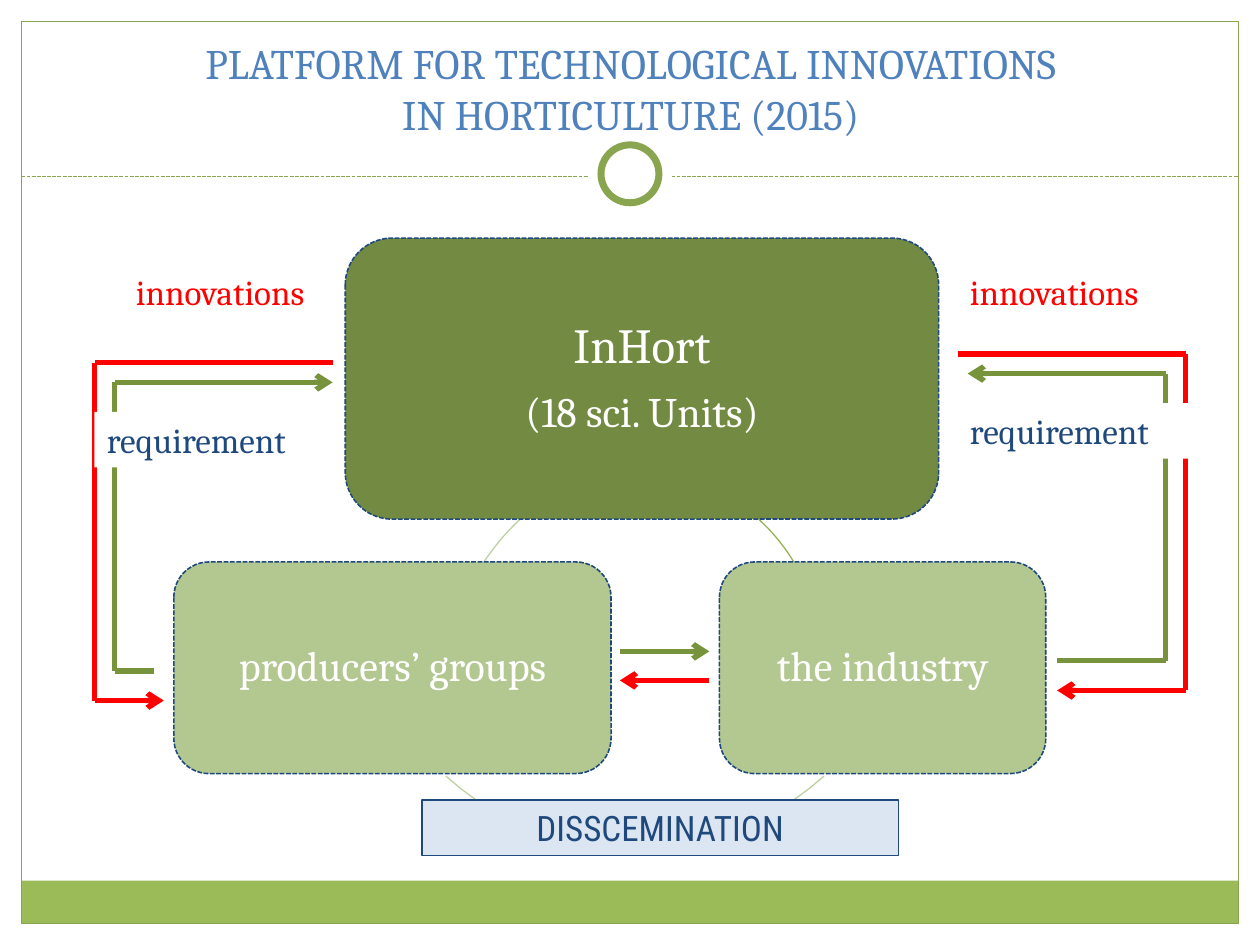
from itertools import pairwise

from lxml import etree
from pptx import Presentation, util as u
from pptx.dml.color import RGBColor
from pptx.enum import dml, shapes, text
from pptx.oxml.ns import qn

# All positions are columns and rows of a 100 x 75 grid.
COLUMNS, ROWS = 100, 75
CELL = u.Inches(0.1)
COLORS = {
    "white": "FFFFFF", "frame": "89A54F", "band": "9BBB59", "title": "4F81BD",
    "navy": "1F497D", "institute": "738A42", "partner": "B3C791",
    "arc": "94B355", "pale_arc": "BED0A0", "innovation": "FF0000",
    "requirement": "77933C", "pale_blue": "DCE6F2",
}
SERIF, SANS = "Cambria", "Roboto Condensed"
SHAPE = shapes.MSO_SHAPE


def color(name):
    return RGBColor.from_string(COLORS[name])


def grid(*values):
    return [round(value * CELL) for value in values]


def style_line(line, name, width, dashed=False):
    line.color.rgb = color(name)
    line.width = u.Pt(width)
    if dashed:
        line.dash_style = dml.MSO_LINE.SQUARE_DOT


def add_box(slide, kind, box, fill=None, line=None, width=0.75, dashed=False):
    shape = slide.shapes.add_shape(kind, *grid(*box))
    shape.shadow.inherit = False
    if fill:
        shape.fill.solid()
        shape.fill.fore_color.rgb = color(fill)
    else:
        shape.fill.background()
    if line:
        style_line(shape.line, line, width, dashed)
    else:
        shape.line.fill.background()
    return shape


def add_line(slide, start, end, name, width=3, dashed=False, arrow=False):
    connector = slide.shapes.add_connector(
        shapes.MSO_CONNECTOR.STRAIGHT, *grid(*start, *end))
    style_line(connector.line, name, width, dashed)
    properties = connector._element.spPr
    if arrow:
        etree.SubElement(properties.find(qn("a:ln")), qn("a:tailEnd"), type="arrow")
    etree.SubElement(properties, qn("a:effectLst"))


def add_route(slide, points, name):
    """Join the points with straight lines and put an arrowhead on the last."""
    for start, end in pairwise(points):
        add_line(slide, start, end, name, arrow=end == points[-1])


def add_arc(slide, controls, name, steps=24):
    """Trace the cubic curve given by four control points."""
    points = []
    for step in range(steps + 1):
        t = step / steps
        weights = ((1 - t) ** 3, 3 * t * (1 - t) ** 2, 3 * t * t * (1 - t), t ** 3)
        points.append(grid(*(sum(w * value for w, value in zip(weights, axis))
                             for axis in zip(*controls))))
    builder = slide.shapes.build_freeform(*points[0])
    builder.add_line_segments(points[1:], close=False)
    arc = builder.convert_to_shape()
    arc.shadow.inherit = False
    arc.fill.background()
    style_line(arc.line, name, 0.75)


def style_text(paragraph, size, name, font=SERIF, align=text.PP_ALIGN.LEFT):
    paragraph.alignment = align
    paragraph.font.size = u.Pt(size)
    paragraph.font.name = font
    paragraph.font.color.rgb = color(name)


def add_label(slide, box, words, name, fill=None, line=None, **style):
    if fill:
        label = add_box(slide, SHAPE.RECTANGLE, box, fill, line)
    else:
        label = slide.shapes.add_textbox(*grid(*box))
    frame = label.text_frame
    frame.word_wrap = True
    frame.vertical_anchor = text.MSO_ANCHOR.TOP
    frame.text = words
    style_text(frame.paragraphs[0], 20, name, **style)


def add_node(slide, box, fill, lines, inset):
    node = add_box(slide, SHAPE.ROUNDED_RECTANGLE, box, fill, "navy", 0.9, True)
    frame = node.text_frame
    frame.word_wrap = True
    frame.vertical_anchor = text.MSO_ANCHOR.MIDDLE
    frame.margin_left = frame.margin_right = u.Inches(inset)
    frame.margin_top = frame.margin_bottom = u.Inches(inset)
    frame.text = "\n".join(words for words, _ in lines)
    for paragraph, (_, size) in zip(frame.paragraphs, lines):
        style_text(paragraph, size, "white", align=text.PP_ALIGN.CENTER)
        paragraph.line_spacing = 0.9
        paragraph.space_after = u.Pt(0.35 * size)


def add_frame(slide, box):
    left, top, width, height = box
    band = 3.4
    add_box(slide, SHAPE.RECTANGLE, (left, top + height - band, width, band), "band")
    add_box(slide, SHAPE.RECTANGLE, box, line="frame")


def add_header(slide, box):
    """Title above a dashed rule with a ring at its middle."""
    left, top, width, height = box
    rule = top + height
    add_line(slide, (left, rule), (left + width, rule), "frame", 0.75, dashed=True)
    for size, line in ((6.7, None), (4.6, "frame")):
        ring = (left + (width - size) / 2, rule - 0.2 - size / 2, size, size)
        add_box(slide, SHAPE.OVAL, ring, "white", line, 4)

    title = slide.shapes.title
    title.left, title.top, title.width, title.height = grid(
        left + 0.3, rule - 9.6, width - 0.5, 7.1)
    frame = title.text_frame
    frame.word_wrap = True
    frame.auto_size = text.MSO_AUTO_SIZE.NONE
    frame.vertical_anchor = text.MSO_ANCHOR.BOTTOM
    frame.text = "PLATFORM FOR TECHNOLOGICAL INNOVATIONS\vIN HORTICULTURE (2015)"
    style_text(frame.paragraphs[0], 24, "title", align=text.PP_ALIGN.CENTER)


def add_circle_arcs(slide):
    add_arc(slide, [(60.2, 41.2), (61.3, 42.2), (62.2, 43.3), (63, 44.6)], "arc")
    add_arc(slide, [(65.4, 61.6), (56.8, 69.3), (43.9, 69.3), (35.4, 61.6)], "pale_arc")
    add_arc(slide, [(38.4, 44.6), (39.3, 43.3), (40.2, 42.2), (41.3, 41.2)], "pale_arc")


def add_loop(slide, box, inward, top_reach, bottom_reach, labels):
    """Innovations run down the outer edge, requirements up inside it.

    inward is 1 or -1; reaches are (innovation, requirement) distances
    from the outer edge; labels are (column, width) pairs.
    """
    left, top, width, height = box
    outer = left if inward > 0 else left + width
    bottom, inner = top + height, outer + 1.6 * inward

    def reach(distance):
        return outer + distance * inward

    add_route(slide, [(reach(top_reach[0]), top), (outer, top), (outer, bottom),
                      (reach(bottom_reach[0]), bottom)], "innovation")
    add_route(slide, [(reach(bottom_reach[1]), bottom - 2.35), (inner, bottom - 2.35),
                      (inner, top + 1.55), (reach(top_reach[1]), top + 1.55)],
              "requirement")
    (column, span), (lower_column, lower_span) = labels
    add_label(slide, (column, 21, span, 4.4), "innovations", "innovation")
    add_label(slide, (lower_column, top + 3.9, lower_span, 4.4),
              "requirement", "navy", fill="white")


def add_exchange(slide, box):
    left, top, width, height = box
    right, bottom = left + width, top + height
    add_route(slide, [(left, top), (right, top)], "requirement")
    add_route(slide, [(right, bottom), (left, bottom)], "innovation")


def main():
    presentation = Presentation()
    presentation.slide_width, presentation.slide_height = grid(COLUMNS, ROWS)
    slide = presentation.slides.add_slide(presentation.slide_layouts[5])

    margin = 1.7
    inside = COLUMNS - 2 * margin
    add_frame(slide, (margin, margin, inside, ROWS - 2 * margin))
    add_header(slide, (margin, margin, inside, 12.3))
    add_circle_arcs(slide)
    add_node(slide, (27.4, 18.9, 47.1, 22.3), "institute",
             [("InHort", 28), ("(18 sci. Units)", 24)], 0.23)
    add_node(slide, (57.1, 44.6, 25.9, 16.8), "partner", [("the industry", 24)], 0.18)
    add_node(slide, (13.8, 44.6, 34.7, 16.8), "partner", [("producers’ groups", 24)], 0.18)
    add_loop(slide, (7.5, 28.8, 18.9, 26.8), 1, (18.9, 18.9), (5.5, 4.7),
             [(9.8, 16.5), (7.5, 19.7)])
    add_loop(slide, (76, 28.1, 18.1, 26.7), -1, (18.1, 17.3), (10.2, 10.2),
             [(76, 19.7), (76, 19.7)])
    add_exchange(slide, (49.2, 51.7, 7.1, 2.3))
    add_label(slide, (33.5, 63.5, 37.8, 4.4), "DISSCEMINATION", "navy",
              fill="pale_blue", line="navy", font=SANS, align=text.PP_ALIGN.CENTER)
    presentation.save("out.pptx")


if __name__ == "__main__":
    main()
